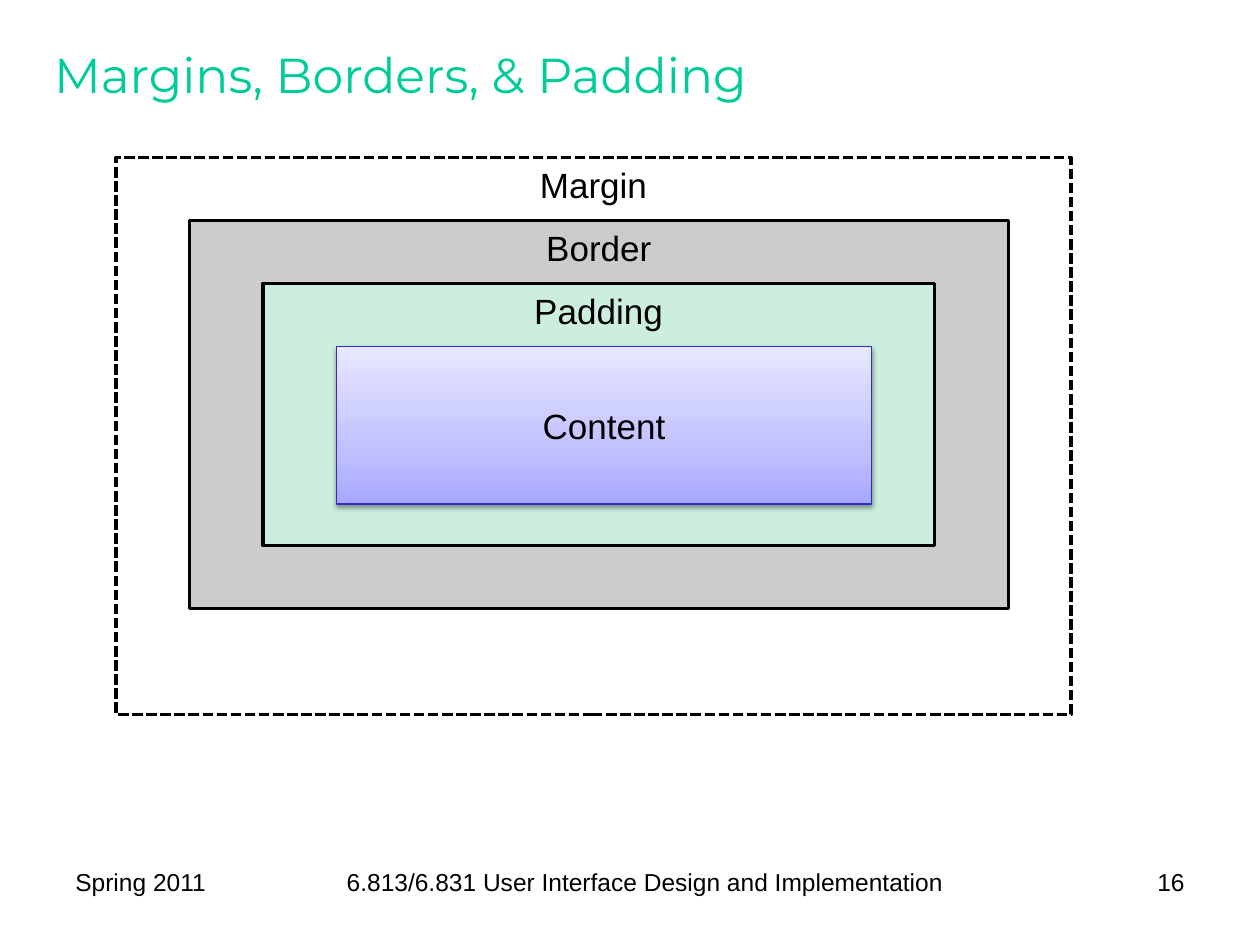
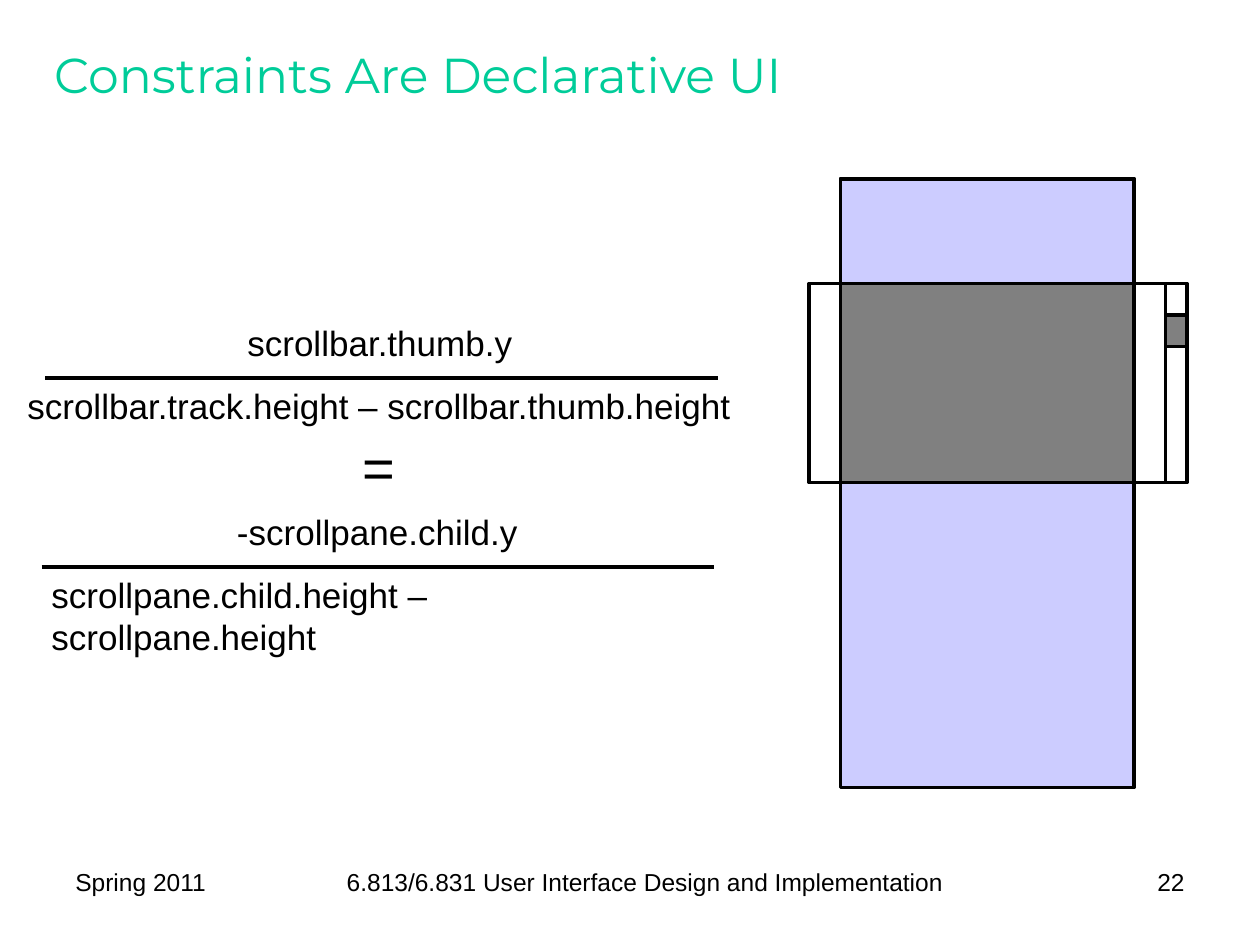
from copy import deepcopy

from lxml import etree
from pptx import Presentation
from pptx.dml.color import RGBColor
from pptx.enum.dml import MSO_LINE_DASH_STYLE as Dash
from pptx.enum.shapes import MSO_CONNECTOR as Connector, MSO_SHAPE as Shape
from pptx.enum.text import MSO_ANCHOR as Anchor, PP_ALIGN as Align
from pptx.oxml.ns import qn
from pptx.util import Inches, Pt

# Shared style
BLACK, WHITE, GREY, LILAC = "000000", "FFFFFF", "808080", "CCCCFF"
TITLE = {"name": "Montserrat", "size": Pt(28), "color": "00CC99"}
BODY = {"name": "Arial", "size": Pt(20), "color": BLACK}
FOOT = {**BODY, "size": Pt(14)}
EQUALS = {**BODY, "size": Pt(32)}
TITLE_AREA = (0.33, 0.17, 9.25, 0.83)
TERM, COURSE = "Spring 2011", "6.813/6.831 User Interface Design and Implementation"
FOOT_TOP, FOOT_HEIGHT = 6.83, 0.52

# Box model: label, fill, width, height; each box starts one step further in
BOX_MODEL = [
    ("Margin", WHITE, 7.58, 4.42),
    ("Border", "CCCCCC", 6.5, 3.08),
    ("Padding", "CCEEDF", 5.33, 2.08),
    ("Content", None, 4.25, 1.25),
]
BOX_START, BOX_STEP = (0.92, 1.25), (0.583, 0.5)
CONTENT_STOPS = [(0, "A7A7FF"), (0.35, "C1C1FF"), (1, "E7E7FF")]
CONTENT_SHADOW = {"blurRad": Pt(3.1), "dist": Pt(1.6), "dir": 90 * 60000, "rotWithShape": 0}

# Fractions: numerator and its extent, denominator and its extent, wrapping, bar
FRACTIONS = [
    ("-scrollpane.child.y", (1.78, 2.43),
     "scrollpane.child.height – scrollpane.height", (0.31, 5.36), True, (0.33, 4.5)),
    ("scrollbar.thumb.y", (1.86, 2.31),
     "scrollbar.track.height – scrollbar.thumb.height", (0.11, 5.8), False, (0.36, 3)),
]
BAR_LENGTH, TERM_HEIGHT, NUMERATOR_RISE = 5.34, 0.43, 0.5

# Scroll pane, from back to front
CHILD_LEFT, CHILD_TOP, CHILD_WIDTH = 6.67, 1.42, 2.33
PANE_LEFT, PANE_TOP, PANE_WIDTH, PANE_HEIGHT = 6.42, 2.25, 2.83, 1.58
TRACK_LEFT, TRACK_WIDTH = PANE_LEFT + PANE_WIDTH, 0.17
SCROLL_PANE = [
    (CHILD_LEFT, CHILD_TOP, CHILD_WIDTH, 4.83, LILAC),
    (PANE_LEFT, PANE_TOP, PANE_WIDTH, PANE_HEIGHT, None),
    (TRACK_LEFT, PANE_TOP, TRACK_WIDTH, PANE_HEIGHT, WHITE),
    (TRACK_LEFT, PANE_TOP + 0.25, TRACK_WIDTH, 0.25, GREY),
    (CHILD_LEFT, CHILD_TOP, CHILD_WIDTH, PANE_TOP - CHILD_TOP, LILAC),
    (CHILD_LEFT, PANE_TOP, CHILD_WIDTH, PANE_HEIGHT, GREY),
]


def rgb(color):
    return RGBColor.from_string(color)


def inches(*lengths):
    return [Inches(length) for length in lengths]


def write(frame, text, style, align=Align.LEFT, anchor=Anchor.TOP, wrap=True):
    frame.word_wrap = wrap
    frame.vertical_anchor = anchor
    paragraph = frame.paragraphs[0]
    paragraph.alignment = align
    run = paragraph.add_run()
    run.text = text
    for key, value in style.items():
        if key == "color":
            run.font.color.rgb = rgb(value)
        else:
            setattr(run.font, key, value)


def add_text(slide, area, text, style, align=Align.LEFT, wrap=True):
    write(slide.shapes.add_textbox(*inches(*area)).text_frame, text, style, align, wrap=wrap)


def set_line(line, color=BLACK, width=2):
    line.color.rgb = rgb(color)
    line.width = Pt(width)


def add_rect(slide, area, fill):
    rect = slide.shapes.add_shape(Shape.RECTANGLE, *inches(*area))
    rect.shadow.inherit = False
    if fill:
        rect.fill.solid()
        rect.fill.fore_color.rgb = rgb(fill)
    else:
        rect.fill.background()
    set_line(rect.line)
    return rect


def add_bar(slide, left, top):
    bar = slide.shapes.add_connector(
        Connector.STRAIGHT, *inches(left, top, left + BAR_LENGTH, top))
    set_line(bar.line)
    etree.SubElement(bar._element.spPr, qn("a:effectLst"))


def add_slide(deck, title, number):
    slide = deck.slides.add_slide(deck.slide_layouts[5])
    heading = slide.shapes.title
    heading.left, heading.top, heading.width, heading.height = inches(*TITLE_AREA)
    write(heading.text_frame, title, TITLE, anchor=Anchor.MIDDLE)
    for left, width, text, align in [
        (0.5, 1.5, TERM, Align.LEFT),
        (2.08, 6.08, COURSE, Align.CENTER),
        (8.25, 1.25, str(number), Align.RIGHT),
    ]:
        add_text(slide, (left, FOOT_TOP, width, FOOT_HEIGHT), text, FOOT, align)
    return slide


def shade_content(content):
    # Three-stop gradient, thin line and soft shadow
    content.fill.gradient()
    content.fill.gradient_angle = 90
    stops = content._element.spPr.find(".//" + qn("a:gsLst"))
    stops.insert(1, deepcopy(stops[0]))
    for stop, (position, color) in zip(content.fill.gradient_stops, CONTENT_STOPS):
        stop.position = position
        stop.color.rgb = rgb(color)
    set_line(content.line, "2E2ECB", 0.75)
    effects = content._element.spPr.find(qn("a:effectLst"))
    shadow = etree.SubElement(effects, qn("a:outerShdw"))
    for key, value in CONTENT_SHADOW.items():
        shadow.set(key, str(value))
    tint = etree.SubElement(shadow, qn("a:srgbClr"), val=BLACK)
    etree.SubElement(tint, qn("a:alpha"), val="38000")


def build_box_model(deck):
    slide = add_slide(deck, "Margins, Borders, & Padding", 16)
    for depth, (label, fill, width, height) in enumerate(BOX_MODEL):
        left, top = (start + depth * step for start, step in zip(BOX_START, BOX_STEP))
        box = add_rect(slide, (left, top, width, height), fill)
        anchor = Anchor.TOP
        if label == "Margin":
            box.line.dash_style = Dash.SQUARE_DOT
        elif label == "Content":
            shade_content(box)
            anchor = Anchor.MIDDLE
        write(box.text_frame, label, BODY, Align.CENTER, anchor, wrap=False)


def build_constraints(deck):
    slide = add_slide(deck, "Constraints Are Declarative UI", 22)
    for *area, fill in SCROLL_PANE:
        add_rect(slide, area, fill)
    for numerator, over, denominator, under, wrap, (bar_left, bar_top) in FRACTIONS:
        for text, (left, width), top, wraps in [
            (numerator, over, bar_top - NUMERATOR_RISE, False),
            (denominator, under, bar_top, wrap),
        ]:
            align = Align.LEFT if wraps else Align.CENTER
            add_text(slide, (left, top, width, TERM_HEIGHT), text, BODY, align, wraps)
        add_bar(slide, bar_left, bar_top)
    add_text(slide, (2.78, 3.38, 0.46, 0.63), "=", EQUALS, Align.CENTER, False)


def main():
    deck = Presentation()
    deck.slide_width, deck.slide_height = inches(10, 7.5)
    build_box_model(deck)
    build_constraints(deck)
    deck.save("out.pptx")


if __name__ == "__main__":
    main()
